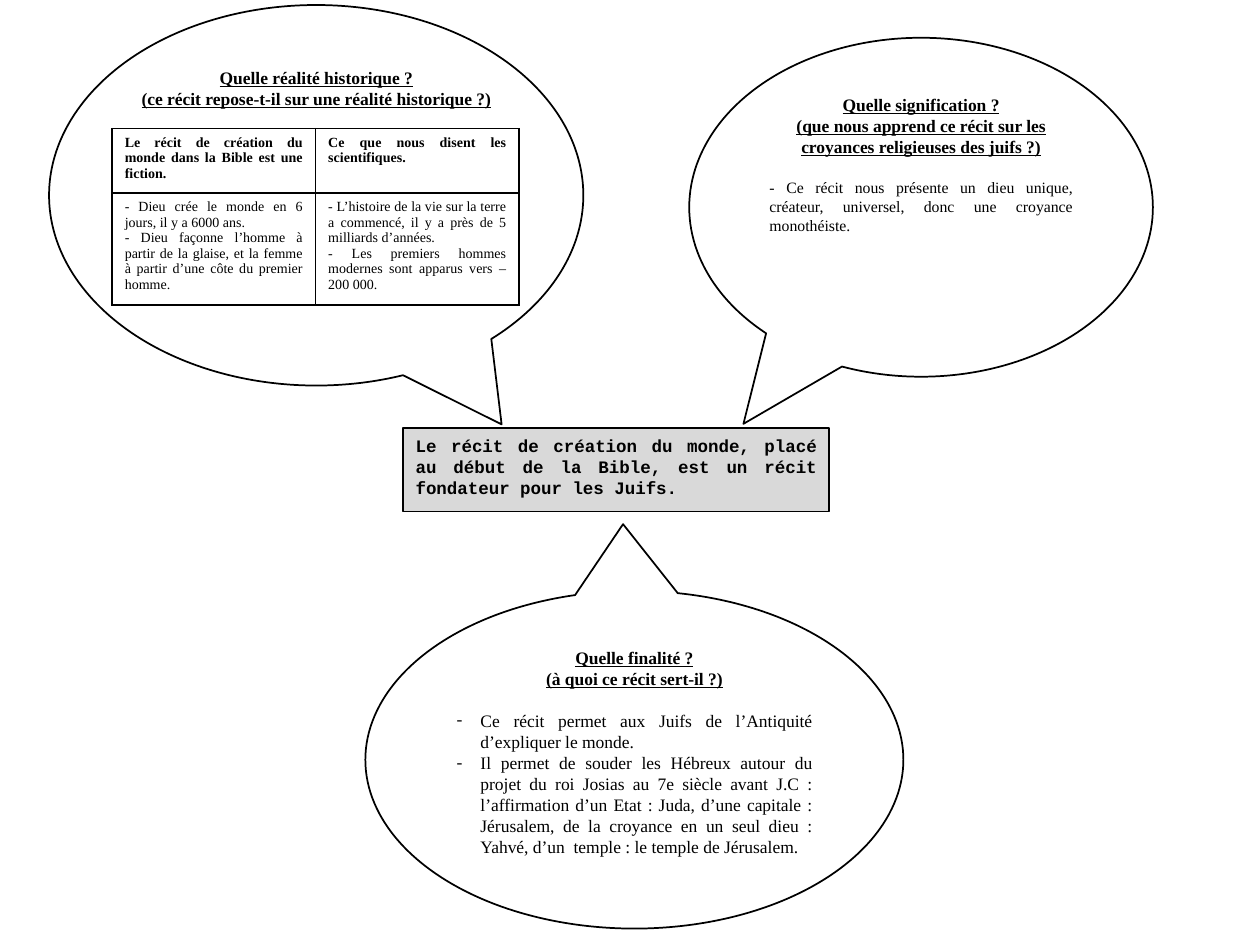
from pptx import Presentation, util as u
from pptx.dml.color import RGBColor
from pptx.enum import shapes, text
from pptx.oxml import parse_xml
from pptx.oxml.ns import nsdecls

BLACK = RGBColor(0, 0, 0)
WHITE = RGBColor(255, 255, 255)
GREY = RGBColor(217, 217, 217)
SERIF, MONO = "Times New Roman", "Courier New"
CENTER, JUSTIFY = text.PP_ALIGN.CENTER, text.PP_ALIGN.JUSTIFY
OVAL = shapes.MSO_SHAPE.OVAL_CALLOUT
RECTANGLE = shapes.MSO_SHAPE.RECTANGLE

HEADING = {"size": u.Pt(10), "bold": True, "underline": True, "name": SERIF}
BODY = {"size": u.Pt(10), "bold": False, "name": SERIF}
SMALL = {**BODY, "size": u.Pt(9)}
CELL = {**BODY, "size": u.Pt(8)}
CELL_HEAD = {**CELL, "bold": True}
THESIS = {"size": u.Pt(10), "bold": True, "name": MONO}

deck = Presentation()
deck.slide_width, deck.slide_height = u.Inches(10), u.Inches(7.5)
page = deck.slides.add_slide(deck.slide_layouts[6])
STEP = deck.slide_width // 1000


def write(frame, lines, look, align):
    for line in lines:
        para = frame.paragraphs[0]
        if para.runs:
            para = frame.add_paragraph()
        para.alignment = align
        span = para.add_run()
        span.text = line
        span.font.color.rgb = BLACK
        for name, value in look.items():
            setattr(span.font, name, value)


def add_box(kind, columns_rows, tip=(), fill=None):
    box = page.shapes.add_shape(kind, *(n * STEP for n in columns_rows))
    box.shadow.inherit = False
    for index, share in enumerate(tip):
        box.adjustments[index] = share
    if fill is None:
        box.fill.background()
    else:
        box.fill.solid()
        box.fill.fore_color.rgb = fill
    box.line.color.rgb = BLACK
    box.line.width = u.Pt(1)
    box.text_frame.word_wrap = True
    box.text_frame.vertical_anchor = text.MSO_ANCHOR.TOP
    return box.text_frame


bubbles = [
    ((547, 30, 368, 269), (-0.383, 0.639),
     ["Quelle signification ?",
      "(que nous apprend ce récit sur les croyances religieuses des juifs ?)"],
     ["- Ce récit nous présente un dieu unique, créateur, universel, "
      "donc une croyance monothéiste."], SMALL, False),
    ((39, 4, 424, 302), (0.347, 0.602),
     ["Quelle réalité historique ?",
      "(ce récit repose-t-il sur une réalité historique ?)"],
     [], BODY, False),
    ((290, 469, 427, 268), (-0.021, -0.698),
     ["Quelle finalité ?", "(à quoi ce récit sert-il ?)"],
     ["Ce récit permet aux Juifs de l’Antiquité d’expliquer le monde.",
      "Il permet de souder les Hébreux autour du projet du roi Josias au 7e siècle "
      "avant J.C : l’affirmation d’un Etat : Juda, d’une capitale : Jérusalem, "
      "de la croyance en un seul dieu : Yahvé, d’un  temple : le temple de Jérusalem."],
     BODY, True),
]
for place, tip, headings, lines, look, bulleted in bubbles:
    frame = add_box(OVAL, place, tip)
    write(frame, headings, HEADING, CENTER)
    frame.paragraphs[-1].space_after = u.Pt(12)
    write(frame, lines, look, JUSTIFY)
    if bulleted:
        for para in frame.paragraphs[len(headings):]:
            layout = para._p.get_or_add_pPr()
            layout.set("marL", str(19 * STEP))
            layout.set("indent", str(-19 * STEP))
            layout.append(parse_xml(f'<a:buFont {nsdecls("a")} typeface="{SERIF}"/>'))
            layout.append(parse_xml(f'<a:buChar {nsdecls("a")} char="-"/>'))

thesis = add_box(RECTANGLE, (320, 340, 338, 66), fill=GREY)
write(thesis, ["Le récit de création du monde, placé au début de la Bible, "
               "est un récit fondateur pour les Juifs."], THESIS, JUSTIFY)

comparison = [
    [["Le récit de création du monde dans la Bible est une fiction."],
     ["Ce que nous disent les scientifiques."]],
    [["- Dieu crée le monde en 6 jours, il y a 6000 ans.",
      "- Dieu façonne l’homme à partir de la glaise, et la femme à partir "
      "d’une côte du premier homme."],
     ["- L’histoire de la vie sur la terre a commencé, il y a près de "
      "5 milliards d’années.",
      "- Les premiers hommes modernes sont apparus vers – 200 000."]],
]
table = page.shapes.add_table(2, 2, *(n * STEP for n in (89, 102, 323, 140))).table
for row, height, look, entries in zip(table.rows, (51, 89), (CELL_HEAD, CELL), comparison):
    row.height = height * STEP
    for cell, lines in zip(row.cells, entries):
        write(cell.text_frame, lines, look, JUSTIFY)
        for side in ("lnL", "lnR", "lnT", "lnB"):
            cell._tc.get_or_add_tcPr().append(parse_xml(
                f'<a:{side} {nsdecls("a")} w="{u.Pt(1)}"><a:solidFill>'
                f'<a:srgbClr val="{BLACK}"/></a:solidFill></a:{side}>'))
        cell.fill.solid()
        cell.fill.fore_color.rgb = WHITE

deck.save("out.pptx")
